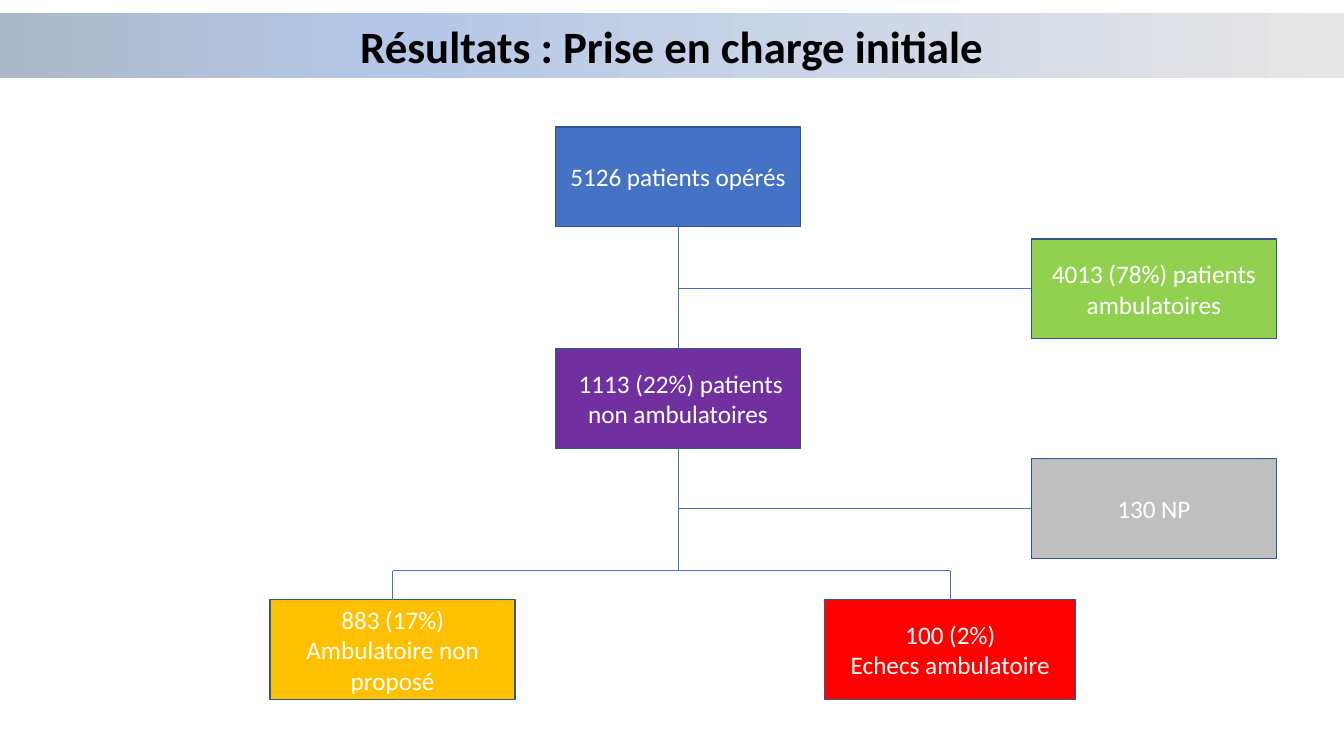
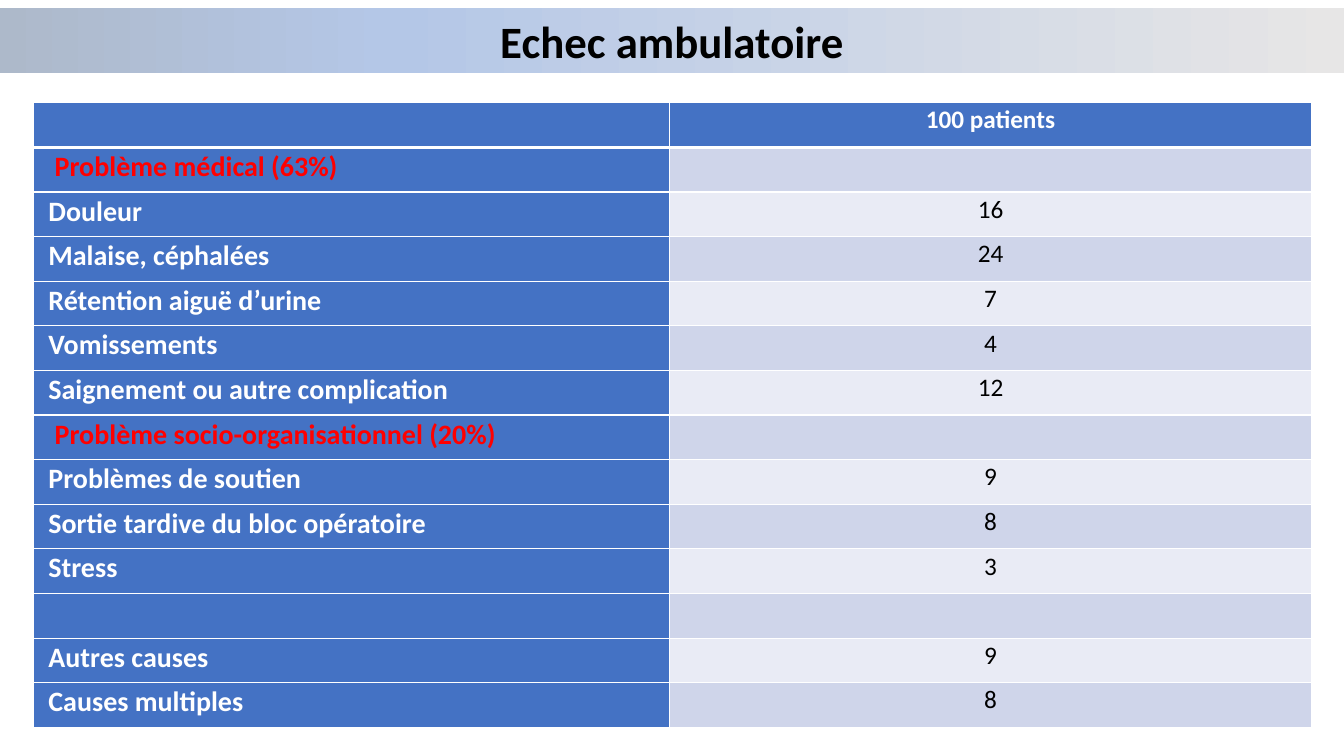
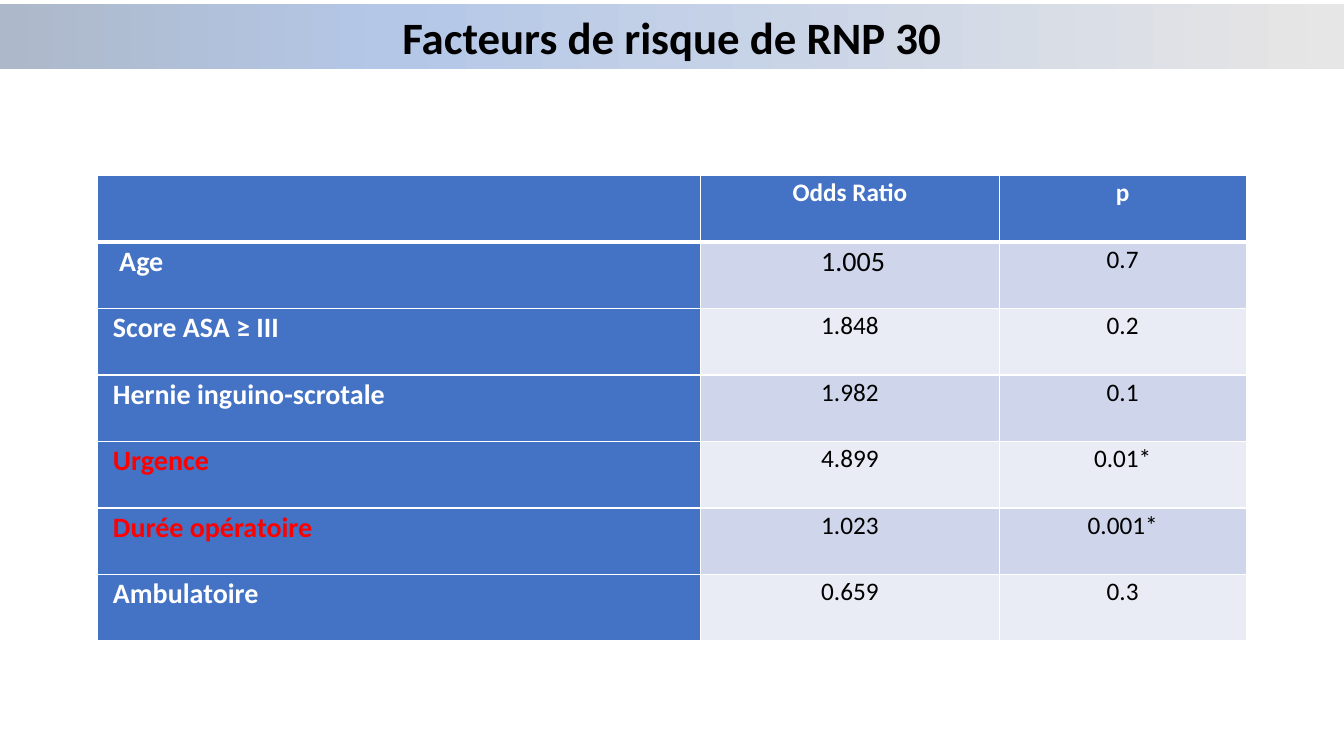
"""Builds three slides on day-surgery results: a patient flow chart and two tables."""
import copy
import dataclasses

import pptx
import pptx.dml.color
import pptx.enum.shapes
import pptx.enum.text
import pptx.oxml
import pptx.oxml.ns
import pptx.util

Inches = pptx.util.Inches
Pt = pptx.util.Pt
ALIGN = pptx.enum.text.PP_ALIGN
ANCHOR = pptx.enum.text.MSO_ANCHOR


@dataclasses.dataclass(frozen=True)
class Theme:
    font: str = "Calibri"
    white: str = "FFFFFF"
    black: str = "000000"
    blue: str = "4472C4"
    edge: str = "325491"
    red: str = "FF0000"
    bands: tuple = ("CFD5EA", "E9EBF5")
    fade: tuple = ((0, "ADB9CA"), (0.29, "B4C7E7"), (1, "E7E6E6"))
    head: int = 32
    label: int = 20
    text: int = 18


THEME = Theme()

FLOW = {
    "title": "Résultats : Prise en charge initiale",
    "top": 0.13,
    "boxes": {
        "all": (5.51, 1.26, 2.43, THEME.blue, "5126 patients opérés"),
        "day": (10.23, 2.37, 2.43, "92D050", "4013 (78%) patients ambulatoires"),
        "stay": (5.51, 3.46, 2.43, "7030A0", " 1113 (22%) patients non ambulatoires"),
        "np": (10.23, 4.55, 2.43, "BFBFBF", "130 NP"),
        "none": (2.68, 5.95, 2.43, "FFC000", "883 (17%) Ambulatoire non proposé"),
        "fail": (8.18, 5.95, 2.49, THEME.red, "100 (2%)\nEchecs ambulatoire"),
    },
    "high": 0.99,
    "fork": 5.66,
}

TABLES = [
    {
        "title": "Echec ambulatoire",
        "top": 0.08,
        "at": (0.33, 1.02, 6.2),
        "cols": (6.31, 6.37),
        "red": (1, 7),
        "big": (),
        "rows": [
            ("", "100 patients"),
            (" Problème médical (63%)", ""),
            ("Douleur", "16"),
            ("Malaise, céphalées", "24"),
            ("Rétention aiguë d’urine", "7"),
            ("Vomissements", "4"),
            ("Saignement ou autre complication", "12"),
            (" Problème socio-organisationnel (20%)", ""),
            ("Problèmes de soutien", "9"),
            ("Sortie tardive du bloc opératoire", "8"),
            ("Stress", "3"),
            ("", ""),
            ("Autres causes", "9"),
            ("Causes multiples", "8"),
        ],
    },
    {
        "title": "Facteurs de risque de RNP 30",
        "top": 0.04,
        "at": (0.97, 1.74, 4.62),
        "cols": (5.98, 2.96, 2.45),
        "red": (4, 5),
        "big": ((1, 1),),
        "rows": [
            ("", "Odds Ratio", "p"),
            (" Age", " 1.005", "0.7"),
            ("Score ASA ≥ III", "1.848", "0.2"),
            ("Hernie inguino-scrotale", "1.982", "0.1"),
            ("Urgence", "4.899", "0.01*"),
            ("Durée opératoire", "1.023", "0.001*"),
            ("Ambulatoire", "0.659", "0.3"),
        ],
    },
]


def paint(fill, tone):
    fill.solid()
    fill.fore_color.rgb = pptx.dml.color.RGBColor.from_string(tone)


def style(frame, size, tone, bold=False, align=ALIGN.CENTER):
    for par in frame.paragraphs:
        par.alignment = align
        font = par.font
        font.name, font.size, font.bold = THEME.font, Pt(size), bold
        font.color.rgb = pptx.dml.color.RGBColor.from_string(tone)


def start(deck, title, top):
    slide = deck.slides.add_slide(deck.slide_layouts[5])
    band = slide.shapes.title
    band.left, band.top = 0, Inches(top)
    band.width, band.height = deck.slide_width, Inches(0.64)
    band.fill.gradient()
    band.fill.gradient_angle = 0
    stops = band._element.spPr.find(".//" + pptx.oxml.ns.qn("a:gsLst"))
    stops.append(copy.deepcopy(stops[-1]))
    for stop, (place, tone) in zip(band.fill.gradient_stops, THEME.fade):
        stop.position = place
        stop.color.rgb = pptx.dml.color.RGBColor.from_string(tone)
    frame = band.text_frame
    frame.text = title
    frame.auto_size = pptx.enum.text.MSO_AUTO_SIZE.NONE
    frame.vertical_anchor = ANCHOR.MIDDLE
    style(frame, THEME.head, THEME.black, True)
    return slide


def add_box(slide, left, top, width, tone, text):
    box = slide.shapes.add_shape(
        pptx.enum.shapes.MSO_SHAPE.RECTANGLE,
        Inches(left), Inches(top), Inches(width), Inches(FLOW["high"]))
    box.shadow.inherit = False
    paint(box.fill, tone)
    paint(box.line.fill, THEME.edge)
    box.line.width = Pt(1)
    frame = box.text_frame
    frame.text = text
    frame.word_wrap = True
    frame.vertical_anchor = ANCHOR.MIDDLE
    style(frame, THEME.text, THEME.white)
    return box


def add_line(slide, start, end):
    """Joins two ends, each a point or a (box, side) pair."""
    line = slide.shapes.add_connector(
        pptx.enum.shapes.MSO_CONNECTOR.STRAIGHT, 0, 0, 0, 0)
    line.begin_x, line.begin_y = spot(start)
    line.end_x, line.end_y = spot(end)
    if not isinstance(start[0], int):
        line.begin_connect(*start)
    if not isinstance(end[0], int):
        line.end_connect(*end)
    paint(line.line.fill, THEME.blue)
    line.line.width = Pt(0.5)
    line._element.spPr.append(pptx.oxml.parse_xml(
        f"<a:effectLst {pptx.oxml.ns.nsdecls('a')}/>"))


def spot(end):
    if isinstance(end[0], int):
        return end
    box, side = end
    mid_x, mid_y = box.left + box.width // 2, box.top + box.height // 2
    return ((mid_x, box.top), (box.left, mid_y),
            (mid_x, box.top + box.height), (box.left + box.width, mid_y))[side]


def add_flow(deck):
    slide = start(deck, FLOW["title"], FLOW["top"])
    box = {key: add_box(slide, *data) for key, data in FLOW["boxes"].items()}
    trunk = spot((box["all"], 2))[0]
    fork = int(Inches(FLOW["fork"]))
    add_line(slide, (box["all"], 2), (box["stay"], 0))
    add_line(slide, (box["stay"], 2), (trunk, fork))
    for key in ("day", "np"):
        add_line(slide, (trunk, spot((box[key], 1))[1]), (box[key], 1))
    ends = [(spot((box[key], 0))[0], fork) for key in ("none", "fail")]
    add_line(slide, *ends)
    for end, key in zip(ends, ("none", "fail")):
        add_line(slide, end, (box[key], 0))


def rule(cell, row):
    widths = {"L": 1, "R": 1, "T": 3 if row == 1 else 1, "B": 3 if row == 0 else 1}
    for side, width in widths.items():
        cell._tc.get_or_add_tcPr().append(pptx.oxml.parse_xml(
            f'<a:ln{side} {pptx.oxml.ns.nsdecls("a")} w="{Pt(width)}"><a:solidFill>'
            f'<a:srgbClr val="{THEME.white}"/></a:solidFill></a:ln{side}>'))


def add_table(deck, data):
    slide = start(deck, data["title"], data["top"])
    rows, cols = data["rows"], data["cols"]
    left, top, high = data["at"]
    table = slide.shapes.add_table(
        len(rows), len(cols), Inches(left), Inches(top),
        Inches(sum(cols)), Inches(high)).table
    for col, width in zip(table.columns, cols):
        col.width = Inches(width)
    for r, row in enumerate(rows):
        for c, text in enumerate(row):
            cell = table.cell(r, c)
            head, label = r == 0, c == 0
            cell.text = text
            cell.margin_left = cell.margin_right = Inches(0.15)
            cell.margin_top = cell.margin_bottom = 0
            rule(cell, r)
            paint(cell.fill, THEME.blue if head or label else THEME.bands[(r - 1) % 2])
            tone = THEME.white if head or label else THEME.black
            if label and r in data["red"]:
                tone = THEME.red
            large = label and not head or (r, c) in data["big"]
            style(cell.text_frame, THEME.label if large else THEME.text, tone,
                  head or label, ALIGN.JUSTIFY if label else ALIGN.CENTER)
            cell.text_frame.paragraphs[0].line_spacing = 1.07


def main():
    deck = pptx.Presentation()
    deck.slide_width, deck.slide_height = Inches(13.33), Inches(7.5)
    add_flow(deck)
    for data in TABLES:
        add_table(deck, data)
    deck.save("out.pptx")


if __name__ == "__main__":
    main()
